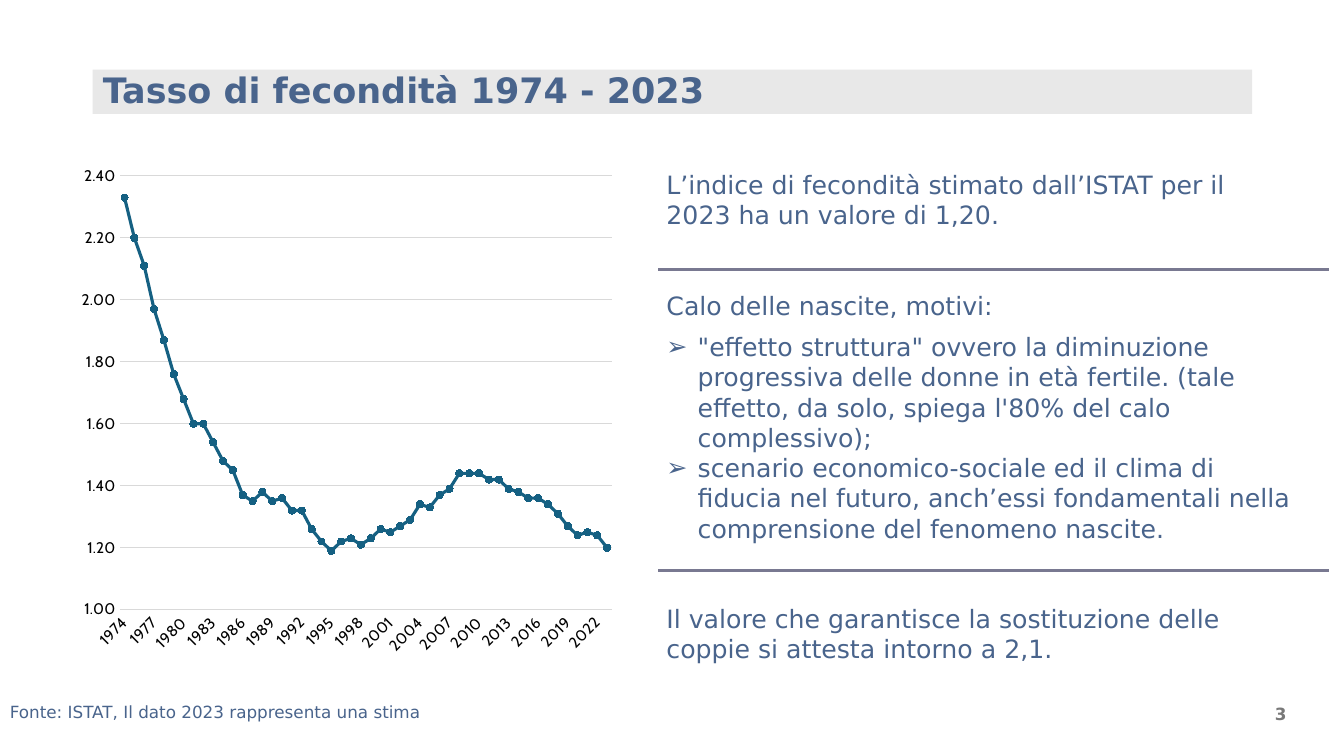
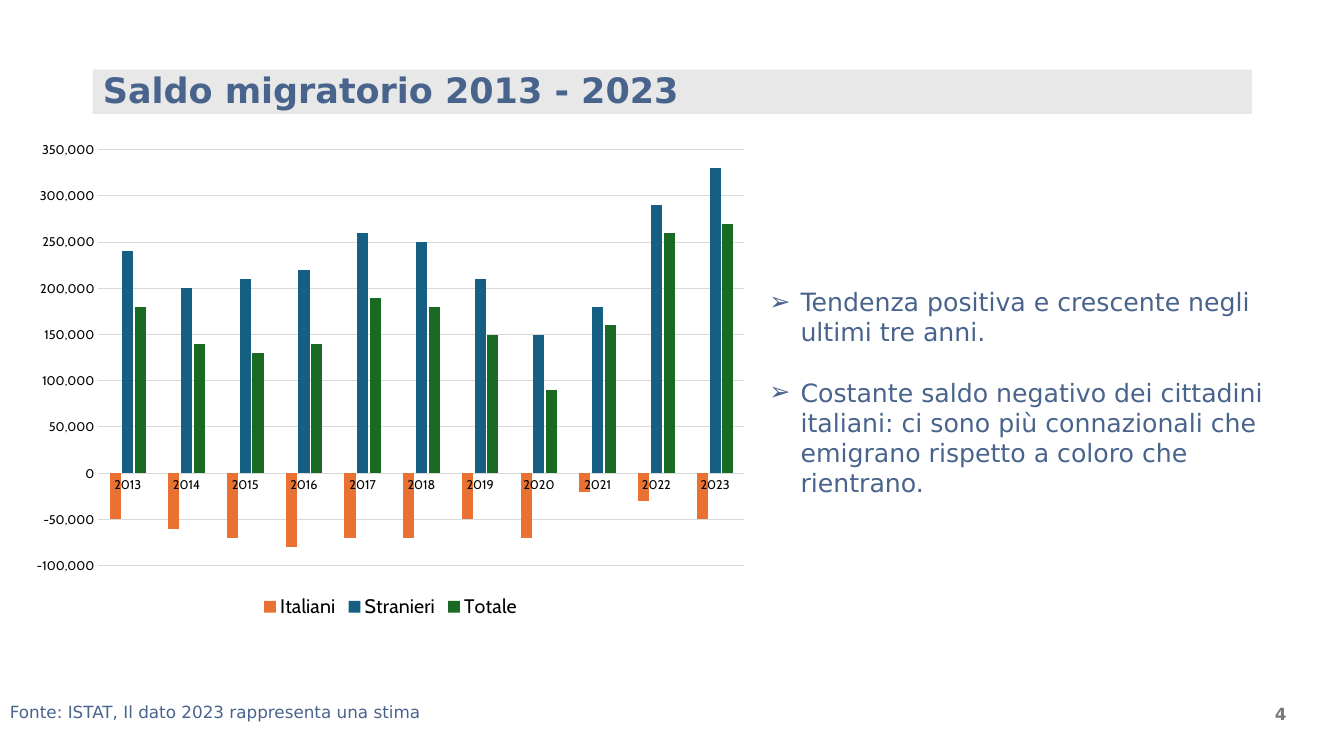
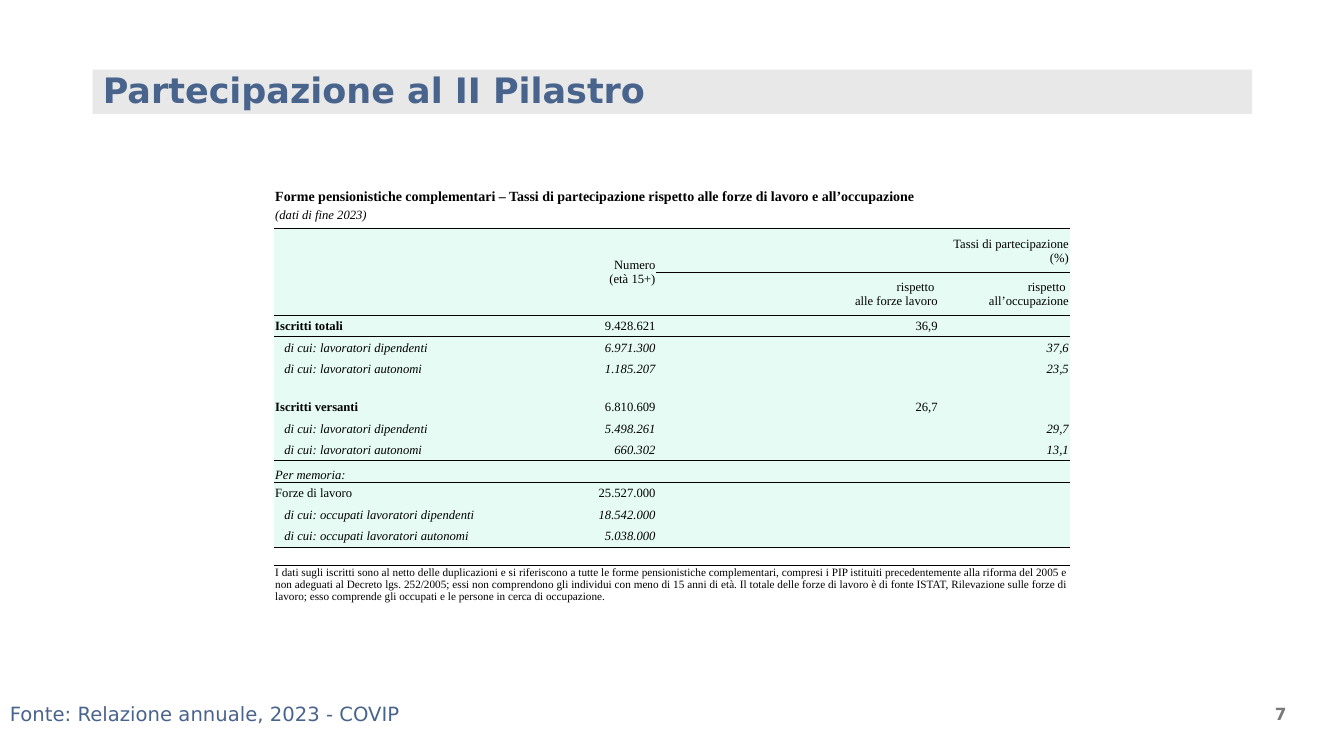
import dataclasses

import lxml.etree
import pptx
import pptx.chart.data
import pptx.dml.color
import pptx.enum.chart
import pptx.enum.shapes
import pptx.enum.text
import pptx.oxml.ns
import pptx.util

Inches = pptx.util.Inches
Align = pptx.enum.text.PP_ALIGN
Anchor = pptx.enum.text.MSO_ANCHOR
ChartType = pptx.enum.chart.XL_CHART_TYPE
qn = pptx.oxml.ns.qn


@dataclasses.dataclass(frozen=True)
class Theme:
    ink: str = "49648C"
    band: str = "E8E8E8"
    divider: str = "797991"
    number: str = "797979"
    black: str = "000000"
    grid: str = "D9D9D9"
    blue: str = "156082"
    orange: str = "E97132"
    green: str = "196B24"
    mint: str = "E5FBF4"
    white: str = "FFFFFF"
    text_font: str = "DejaVu Sans"
    chart_font: str = "Cabin"
    table_font: str = "Times New Roman"
    title_size: int = 25
    body_size: int = 18
    source_size: int = 12
    large_source_size: int = 14
    number_size: int = 12
    line_axis_size: int = 11
    column_axis_size: int = 9
    legend_size: int = 14
    table_title_size: int = 10
    table_size: int = 9
    table_note_size: int = 8


THEME = Theme()


@dataclasses.dataclass(frozen=True)
class Box:
    left: float
    top: float
    width: float
    height: float

    def lengths(self):
        return [Inches(value) for value in dataclasses.astuple(self)]


TITLE = Box(0.92, 0.39, 11.5, 1.05)
BAND_HEIGHT = 0.44
NUMBER = Box(9.86, 6.88, 3, 0.4)

BULLET = "➢"
HANG = 0.31
SECTION_GAP = 43
BULLET_GAP = 21.5

FERTILITY_YEARS = range(1974, 2024)
FERTILITY = [
    2.33, 2.2, 2.11, 1.97, 1.87, 1.76, 1.68, 1.6, 1.6, 1.54,
    1.48, 1.45, 1.37, 1.35, 1.38, 1.35, 1.36, 1.32, 1.32, 1.26,
    1.22, 1.19, 1.22, 1.23, 1.21, 1.23, 1.26, 1.25, 1.27, 1.29,
    1.34, 1.33, 1.37, 1.39, 1.44, 1.44, 1.44, 1.42, 1.42, 1.39,
    1.38, 1.36, 1.36, 1.34, 1.31, 1.27, 1.24, 1.25, 1.24, 1.2,
]
MIGRATION_YEARS = range(2013, 2024)
MIGRATION = {
    "Italiani": [-50000, -60000, -70000, -80000, -70000, -70000, -50000,
                 -70000, -20000, -30000, -50000],
    "Stranieri": [240000, 200000, 210000, 220000, 260000, 250000, 210000,
                  150000, 180000, 290000, 330000],
    "Totale": [180000, 140000, 130000, 140000, 190000, 180000, 150000,
               90000, 160000, 260000, 270000],
}
ESTIMATE_SOURCE = "Fonte: ISTAT, Il dato 2023 rappresenta una stima"

COLUMNS = [2.83, 0.96, 0.66, 2.14, 1.3]
HEADER_HEIGHT, GAP_HEIGHT, SPACER_HEIGHT, NOTE_HEIGHT = 0.43, 0.16, 0.18, 0.89
FIXED_ROWS = {2: HEADER_HEIGHT, 3: HEADER_HEIGHT, 7: GAP_HEIGHT,
              15: SPACER_HEIGHT, 16: NOTE_HEIGHT}
NO_GRID_STYLE = "{2D5ABB26-0587-4C30-8999-92F81FD0307C}"
MERGES = [(0, 0, 0, 4), (2, 0, 3, 0), (2, 1, 3, 1), (2, 3, 2, 4),
          (14, 3, 14, 4), (16, 0, 16, 4)]
RULES = {1: range(5), 2: (0, 1, 3, 4), 3: range(5), 10: range(5), 14: range(5)}
WHITE_ROWS = (0, 1, 15, 16)
BOLD_ROWS = (0, 4, 8)
DETAIL_ROWS = (5, 6, 9, 10, 13, 14)
ITALIC_ROWS = (1, 11) + DETAIL_ROWS
ROWS = [
    ["Forme pensionistiche complementari – Tassi di partecipazione rispetto "
     "alle forze di lavoro e all’occupazione"],
    ["(dati di fine 2023)"],
    ["", "Numero\n(età 15+)", "", "Tassi di partecipazione\n(%)"],
    ["", "", "", "rispetto \nalle forze lavoro", "rispetto \nall’occupazione"],
    ["Iscritti totali", "9.428.621", "", "36,9"],
    ["di cui: lavoratori dipendenti", "6.971.300", "", "", "37,6"],
    ["di cui: lavoratori autonomi", "1.185.207", "", "", "23,5"],
    [],
    ["Iscritti versanti", "6.810.609", "", "26,7"],
    ["di cui: lavoratori dipendenti", "5.498.261", "", "", "29,7"],
    ["di cui: lavoratori autonomi", "660.302", "", "", "13,1"],
    ["Per memoria:"],
    ["Forze di lavoro", "25.527.000"],
    ["di cui: occupati lavoratori dipendenti", "18.542.000"],
    ["di cui: occupati lavoratori autonomi", "5.038.000"],
    [],
    ["I dati sugli iscritti sono al netto delle duplicazioni e si riferiscono "
     "a tutte le forme pensionistiche complementari, compresi i PIP istituiti "
     "precedentemente alla riforma del 2005 e non adeguati al Decreto lgs. "
     "252/2005; essi non comprendono gli individui con meno di 15 anni di età. "
     "Il totale delle forze di lavoro è di fonte ISTAT, Rilevazione sulle forze "
     "di lavoro; esso comprende gli occupati e le persone in cerca di "
     "occupazione."],
]


def rgb(color):
    return pptx.dml.color.RGBColor.from_string(color)


def apply(target, values):
    for name, value in values.items():
        setattr(target, name, value)


def fill(target, color):
    target.fill.solid()
    target.fill.fore_color.rgb = rgb(color)


def style_font(font, size, color, name=THEME.text_font, **values):
    apply(font, {"size": pptx.util.Pt(size), "name": name, **values})
    font.color.rgb = rgb(color)


def style_line(line, color, width):
    line.color.rgb = rgb(color)
    line.width = pptx.util.Pt(width)


def write(para, text, size, color, align=Align.LEFT, **values):
    para.text = text
    para.alignment = align
    for span in para.runs:
        style_font(span.font, size, color, **values)


def place(shape, box):
    apply(shape, dict(zip(("left", "top", "width", "height"), box.lengths())))


def add_title(page, box, text):
    title = page.shapes.title
    place(title, box)
    frame = title.text_frame
    apply(frame, {"word_wrap": True, "vertical_anchor": Anchor.MIDDLE,
                  "auto_size": pptx.enum.text.MSO_AUTO_SIZE.NONE})
    write(frame.paragraphs[0], text, THEME.title_size, THEME.ink, bold=True)
    frame.paragraphs[0].line_spacing = 0.9
    band_box = Box(box.left, box.top + 0.3, box.width, BAND_HEIGHT)
    band = page.shapes.add_shape(
        pptx.enum.shapes.MSO_SHAPE.RECTANGLE, *band_box.lengths())
    band.shadow.inherit = False
    fill(band, THEME.band)
    band.line.fill.background()
    title.element.addprevious(band.element)


def add_label(page, box, text, size, color, anchor=Anchor.TOP, **values):
    label = page.shapes.add_textbox(*box.lengths())
    apply(label.text_frame, {"word_wrap": True, "vertical_anchor": anchor})
    write(label.text_frame.paragraphs[0], text, size, color, **values)


def start_page(deck, layout, title, number, source, source_box, source_size):
    page = deck.slides.add_slide(deck.slide_layouts.get_by_name(layout))
    add_title(page, TITLE, title)
    add_label(page, source_box, source, source_size, THEME.ink)
    add_label(page, NUMBER, str(number), THEME.number_size, THEME.number,
              Anchor.MIDDLE, align=Align.RIGHT, bold=True)
    return page


def fill_body(page, box, items):
    body = page.placeholders[1]
    place(body, box)
    frame = body.text_frame
    apply(frame, {"word_wrap": True, "vertical_anchor": Anchor.TOP,
                  "auto_size": pptx.enum.text.MSO_AUTO_SIZE.NONE})
    for index, (text, bulleted, before, after) in enumerate(items):
        para = frame.add_paragraph() if index else frame.paragraphs[0]
        write(para, text, THEME.body_size, THEME.ink)
        apply(para, {"space_before": pptx.util.Pt(before),
                     "space_after": pptx.util.Pt(after)})
        properties = para._p.get_or_add_pPr()
        hang = Inches(HANG) if bulleted else 0
        properties.set("marL", str(hang))
        properties.set("indent", str(-hang))
        if bulleted:
            lxml.etree.SubElement(properties, qn("a:buChar")).set("char", BULLET)
        else:
            lxml.etree.SubElement(properties, qn("a:buNone"))


def add_divider(page, left, right, top):
    divider = page.shapes.add_connector(
        pptx.enum.shapes.MSO_CONNECTOR.STRAIGHT,
        Inches(left), Inches(top), Inches(right), Inches(top))
    style_line(divider.line, THEME.divider, 2)
    lxml.etree.SubElement(
        divider.element.xpath("./p:spPr")[0], qn("a:effectLst"))


def add_chart(page, box, kind, years, series, axis_size, number_format, scale):
    data = pptx.chart.data.CategoryChartData()
    data.categories = [str(year) for year in years]
    for name, values in series.items():
        data.add_series(name, values)
    chart = page.shapes.add_chart(kind, *box.lengths(), data).chart
    apply(chart, {"has_title": False, "has_legend": False})
    style_font(chart.font, 10, THEME.black, THEME.chart_font)
    chart.plots[0].vary_by_categories = False
    for axis in (chart.category_axis, chart.value_axis):
        apply(axis, {"major_tick_mark": pptx.enum.chart.XL_TICK_MARK.NONE,
                     "minor_tick_mark": pptx.enum.chart.XL_TICK_MARK.NONE})
        style_font(axis.tick_labels.font, axis_size, THEME.black,
                   THEME.chart_font)
    style_line(chart.category_axis.format.line, THEME.grid, 0.75)
    value_axis = chart.value_axis
    apply(value_axis, {"has_major_gridlines": True, **scale})
    apply(value_axis.tick_labels, {"number_format": number_format,
                                   "number_format_is_linked": False})
    style_line(value_axis.major_gridlines.format.line, THEME.grid, 0.75)
    value_axis.format.line.fill.background()
    return chart


def add_fertility_chart(page, box):
    chart = add_chart(
        page, box, ChartType.LINE_MARKERS, FERTILITY_YEARS,
        {"Tasso di fecondità": FERTILITY}, THEME.line_axis_size, "#,##0.00",
        {"minimum_scale": 1, "maximum_scale": 2.4, "major_unit": 0.2})
    series = chart.plots[0].series[0]
    series.smooth = False
    style_line(series.format.line, THEME.blue, 2.25)
    apply(series.marker, {"style": pptx.enum.chart.XL_MARKER_STYLE.CIRCLE,
                          "size": 5})
    fill(series.marker.format, THEME.blue)
    style_line(series.marker.format.line, THEME.blue, 0.75)
    axis = chart.element.xpath(".//c:catAx")[0]
    axis.xpath("./c:txPr/a:bodyPr")[0].set("rot", "-2700000")
    skip = lxml.etree.Element(qn("c:tickLblSkip"))
    skip.set("val", "3")
    axis.xpath("./c:noMultiLvlLbl")[0].addprevious(skip)


def add_migration_chart(page, box):
    chart = add_chart(
        page, box, ChartType.COLUMN_CLUSTERED, MIGRATION_YEARS, MIGRATION,
        THEME.column_axis_size, "#,##0",
        {"minimum_scale": -100000, "maximum_scale": 350000,
         "major_unit": 50000})
    plot = chart.plots[0]
    apply(plot, {"gap_width": 200, "overlap": -15})
    for series, color in zip(plot.series,
                             (THEME.orange, THEME.blue, THEME.green)):
        series.invert_if_negative = False
        fill(series.format, color)
    chart.has_legend = True
    apply(chart.legend, {
        "position": pptx.enum.chart.XL_LEGEND_POSITION.BOTTOM,
        "include_in_layout": False})
    style_font(chart.legend.font, THEME.legend_size, THEME.black,
               THEME.chart_font)


def add_rule(cell, side):
    line = lxml.etree.Element(qn("a:" + side))
    line.set("w", str(pptx.util.Pt(0.5)))
    solid = lxml.etree.SubElement(line, qn("a:solidFill"))
    lxml.etree.SubElement(solid, qn("a:srgbClr")).set("val", THEME.black)
    cell._tc.get_or_add_tcPr().insert(0, line)


def format_cell(cell, row, column, text):
    last = len(ROWS) - 1
    size = {0: THEME.table_title_size, last: THEME.table_note_size}.get(
        row, THEME.table_size)
    anchor = {1: Anchor.TOP, 11: Anchor.BOTTOM, last: Anchor.TOP}.get(
        row, Anchor.MIDDLE)
    indented = column == 0 and row in DETAIL_ROWS
    apply(cell, {"margin_left": Inches(0.1 if indented else 0.01),
                 "margin_top": Inches(0.01), "margin_right": Inches(0.01),
                 "margin_bottom": 0, "vertical_anchor": anchor})
    fill(cell, THEME.white if row in WHITE_ROWS else THEME.mint)
    para = cell.text_frame.paragraphs[0]
    if text:
        align = Align.RIGHT if column else Align.LEFT
        write(para, text, size, THEME.black,
              Align.JUSTIFY if row == last else align,
              name=THEME.table_font, italic=row in ITALIC_ROWS,
              bold=column == 0 and row in BOLD_ROWS)
    else:
        ending = lxml.etree.SubElement(para._p, qn("a:endParaRPr"))
        ending.set("sz", str(size * 100))


def add_participation_table(page, box):
    frame = page.shapes.add_table(len(ROWS), len(COLUMNS), *box.lengths())
    frame.element.xpath(".//a:tableStyleId")[0].text = NO_GRID_STYLE
    table = frame.table
    apply(table, {"first_row": False, "horz_banding": False})
    for column, width in zip(table.columns, COLUMNS):
        column.width = Inches(width)
    plain_height = ((box.height - sum(FIXED_ROWS.values()))
                    / (len(ROWS) - len(FIXED_ROWS)))
    for row, texts in enumerate(ROWS):
        table.rows[row].height = Inches(FIXED_ROWS.get(row, plain_height))
        for column in range(len(COLUMNS)):
            text = texts[column] if column < len(texts) else ""
            format_cell(table.cell(row, column), row, column, text)
    for top, left, bottom, right in MERGES:
        table.cell(top, left).merge(table.cell(bottom, right))
    for row in sorted(RULES, reverse=True):
        for column in RULES[row]:
            add_rule(table.cell(row, column), "lnB")
            below = table.cell(row + 1, column)
            if not below.is_spanned:
                add_rule(below, "lnT")


def build_fertility(deck):
    page = start_page(deck, "Title and Content", "Tasso di fecondità 1974 - 2023",
                      3, ESTIMATE_SOURCE, Box(0, 6.91, 5.8, 0.3),
                      THEME.source_size)
    add_fertility_chart(page, Box(0.7, 1.55, 5.48, 5.05))
    fill_body(page, Box(6.51, 1.63, 6.4, 5.03), [
        ("L’indice di fecondità stimato dall’ISTAT per il 2023 ha un valore "
         "di 1,20.", False, 0, 0),
        ("Calo delle nascite, motivi:", False, SECTION_GAP, 8),
        ("\"effetto struttura\" ovvero la diminuzione progressiva delle donne "
         "in età fertile. (tale effetto, da solo, spiega l'80% del calo "
         "complessivo);", True, 0, 0),
        ("scenario economico-sociale ed il clima di fiducia nel futuro, "
         "anch’essi fondamentali nella comprensione del fenomeno nascite.",
         True, 0, 0),
        ("Il valore che garantisce la sostituzione delle coppie si attesta "
         "intorno a 2,1.", False, SECTION_GAP, 0),
    ])
    for top in (2.67, 5.66):
        add_divider(page, 6.53, 13.18, top)


def build_migration(deck):
    page = start_page(deck, "Title and Content", "Saldo migratorio 2013 - 2023",
                      4, ESTIMATE_SOURCE, Box(0, 6.91, 5.71, 0.3),
                      THEME.source_size)
    add_migration_chart(page, Box(0.22, 1.31, 7.31, 4.87))
    fill_body(page, Box(7.53, 2.79, 5.58, 2.22), [
        ("Tendenza positiva e crescente negli ultimi tre anni.", True, 0, 0),
        ("Costante saldo negativo dei cittadini italiani: ci sono più "
         "connazionali che emigrano rispetto a coloro che rientrano.",
         True, BULLET_GAP, 0),
    ])


def build_participation(deck):
    page = start_page(deck, "Title Only", "Partecipazione al II Pilastro", 7,
                      "Fonte: Relazione annuale, 2023 - COVIP",
                      Box(0, 6.91, 10.63, 0.34), THEME.large_source_size)
    add_participation_table(page, Box(2.72, 1.84, sum(COLUMNS), 4.66))


def main():
    deck = pptx.Presentation()
    apply(deck, {"slide_width": Inches(13.33), "slide_height": Inches(7.5)})
    for build in (build_fertility, build_migration, build_participation):
        build(deck)
    deck.save("out.pptx")


if __name__ == "__main__":
    main()
